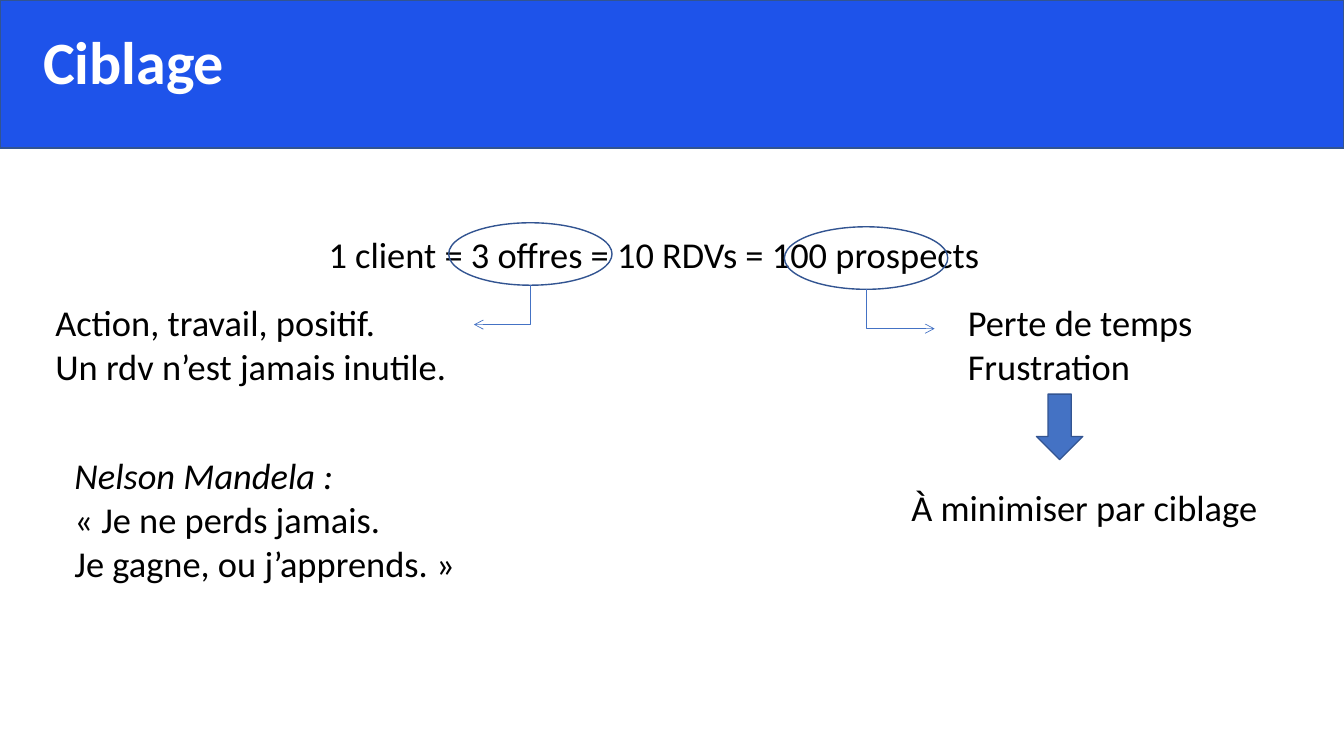
from lxml.etree import SubElement
from pptx import Presentation
from pptx.dml.color import RGBColor
from pptx.enum.shapes import MSO_CONNECTOR, MSO_SHAPE as SHAPE
from pptx.enum.text import MSO_ANCHOR, PP_ALIGN
from pptx.oxml.ns import qn
from pptx.util import Inches, Pt

THEME = {
    "font": "Calibri", "title_size": 42.9, "body_size": 26,
    "band": "1E53EA", "accent": "4472C4", "outline": "325491",
    "text": "000000", "title": "FFFFFF",
}
TITLE = "Ciblage"
# box (left, top, width, height), wraps, lines, number of leading italic lines
TEXTS = [
    ((3.16, 2.25, 7.35, 0.54), True,
     ["1 client = 3 offres = 10 RDVs = 100 prospects"], 0),
    ((0.45, 2.93, 4.12, 0.98), False,
     ["Action, travail, positif.", "Un rdv n’est jamais inutile."], 0),
    ((0.64, 4.45, 4.01, 1.41), False,
     ["Nelson Mandela :", "« Je ne perds jamais.", "Je gagne, ou j’apprends. »"], 1),
    ((9.5, 2.93, 2.45, 0.98), False, ["Perte de temps", "Frustration"], 0),
    ((8.94, 4.76, 3.67, 0.54), False, ["À minimiser par ciblage"], 0),
]
# ellipse left, ellipse top, x of the arrow's tip
HIGHLIGHTS = [(4.45, 2.21, 4.7), (7.78, 2.25, 9.27)]
ELLIPSE_W, ELLIPSE_H, ARROW_DROP = 1.62, 0.62, 0.39


def rgb(name):
    return RGBColor.from_string(THEME[name])


def style_paragraph(p, size, color, bold=False, italic=False):
    for r in p.runs:
        r.font.name, r.font.size = THEME["font"], Pt(THEME[size])
        r.font.bold, r.font.italic = bold, italic
        r.font.color.rgb = rgb(color)


def add_shape(s, kind, box, fill=None, line="outline", weight=1):
    sp = s.shapes.add_shape(kind, *map(Inches, box))
    sp.shadow.inherit = False
    if fill:
        sp.fill.solid()
        sp.fill.fore_color.rgb = rgb(fill)
    else:
        sp.fill.background()
    sp.line.color.rgb, sp.line.width = rgb(line), Pt(weight)
    return sp


def add_text(s, box, wraps, lines, italics):
    tf = s.shapes.add_textbox(*map(Inches, box)).text_frame
    tf.word_wrap = wraps
    tf.text = "\n".join(lines)
    for i, p in enumerate(tf.paragraphs):
        style_paragraph(p, "body_size", "text", italic=i < italics)


def add_corner_arrow(s, x, y, tip_x):
    """Go down from (x, y), then sideways to tip_x, as a turned one-bend connector."""
    run, to_left = abs(tip_x - x), tip_x < x
    mid_x, mid_y = (x + tip_x) / 2, y + ARROW_DROP / 2
    left, right = mid_x - ARROW_DROP / 2, mid_x + ARROW_DROP / 2
    begin_x, end_x = (left, right) if to_left else (right, left)
    c = s.shapes.add_connector(MSO_CONNECTOR.ELBOW, *map(
        Inches, (begin_x, mid_y - run / 2, end_x, mid_y + run / 2)))
    c.line.color.rgb, c.line.width = rgb("accent"), Pt(0.5)
    props = c._element.spPr
    props.find(qn("a:xfrm")).set("rot", str((90 if to_left else 270) * 60000))
    props.find(qn("a:prstGeom")).set("prst", "bentConnector2")
    SubElement(props.find(qn("a:ln")), qn("a:tailEnd"), type="arrow")
    SubElement(props, qn("a:effectLst"))


def main():
    prs = Presentation()
    prs.slide_width, prs.slide_height = Inches(13.33), Inches(7.5)
    s = prs.slides.add_slide(prs.slide_layouts[6])

    add_shape(s, SHAPE.RECTANGLE, (0, 0, 13.33, 1.47), "band")
    title = add_shape(s, SHAPE.RECTANGLE, (0.33, 0.27, 10, 0.87),
                      line="band", weight=0.75)
    tf = title.text_frame
    tf.text, tf.vertical_anchor = TITLE, MSO_ANCHOR.TOP
    p = tf.paragraphs[0]
    p.alignment, p.line_spacing = PP_ALIGN.LEFT, 0.9
    style_paragraph(p, "title_size", "title", bold=True)

    for text in TEXTS:
        add_text(s, *text)
    for left, top, tip_x in HIGHLIGHTS:
        add_shape(s, SHAPE.OVAL, (left, top, ELLIPSE_W, ELLIPSE_H))
        add_corner_arrow(s, left + ELLIPSE_W / 2, top + ELLIPSE_H, tip_x)
    add_shape(s, SHAPE.DOWN_ARROW, (10.28, 3.91, 0.46, 0.65), "accent")

    prs.save("out.pptx")


if __name__ == "__main__":
    main()
